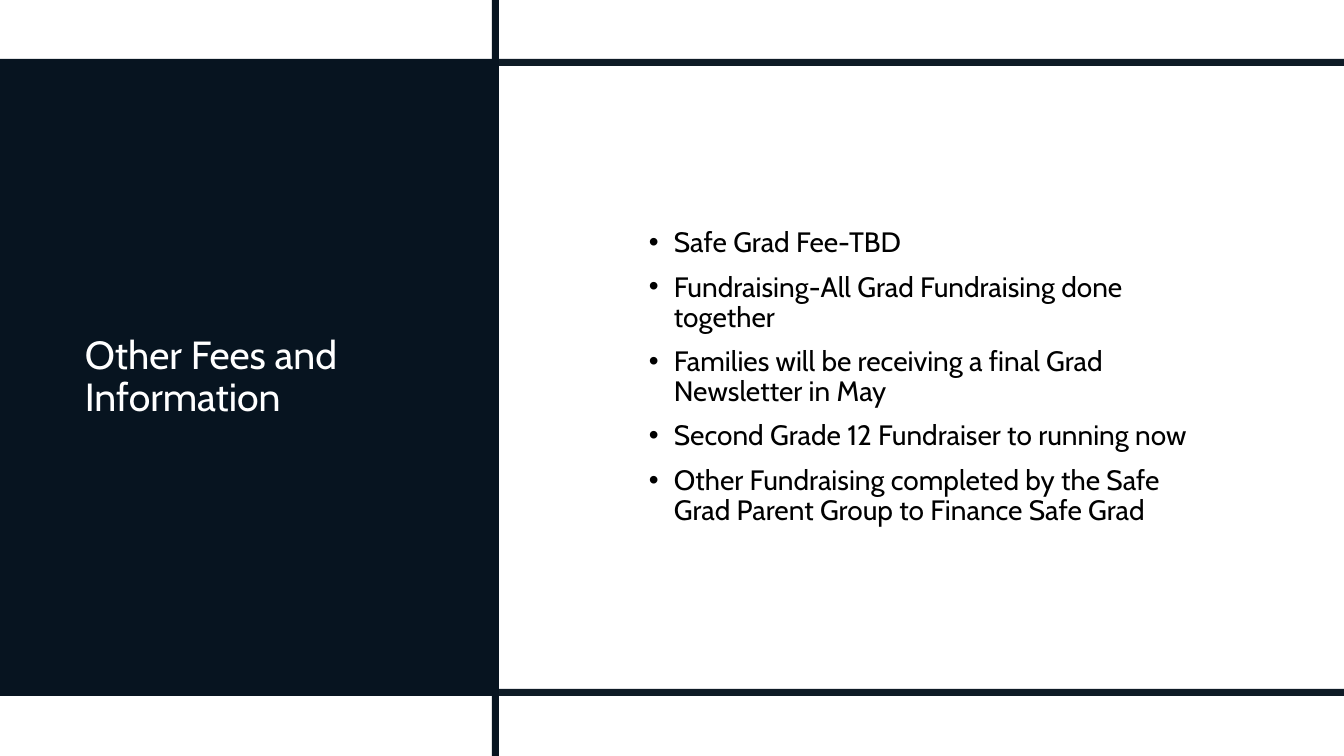
from lxml import etree
from pptx import Presentation
from pptx.dml.color import RGBColor
from pptx.enum.shapes import MSO_SHAPE
from pptx.enum.text import MSO_ANCHOR
from pptx.oxml.ns import qn
from pptx.util import Emu, Pt

RECT = MSO_SHAPE.RECTANGLE
MIDDLE = MSO_ANCHOR.MIDDLE

# Content
TITLE = ["Other Fees and Information"]
FEES = [
    "Safe Grad Fee-TBD",
    "Fundraising-All Grad Fundraising done together",
    "Families will be receiving a final Grad Newsletter in May",
    "Second Grade 12 Fundraiser to running now",
    "Other Fundraising completed by the Safe Grad Parent Group to Finance Safe Grad",
]
NAVY, WHITE, BLACK = "071420", "FFFFFF", "000000"

# Layout in px
WIDTH, HEIGHT = 1344, 756
PANEL_TOP, PANEL_BOTTOM, PANEL_RIGHT = 59, 696, 499
BAR = 7
TEXT_TOP, TEXT_HEIGHT = 160, 435
INDENT = 25
TITLE_BOX = (75, TEXT_TOP, 342, TEXT_HEIGHT)
FEES_BOX = (639, TEXT_TOP, 589, TEXT_HEIGHT)
TITLE_FORMAT = {"name": "Cabin", "size": Pt(28)}
FEES_FORMAT = {"name": "Cabin", "size": Pt(20)}


def px(length):
    return Emu(round(length * 12192000 / WIDTH))


def rgb(color):
    return RGBColor.from_string(color)


prs = Presentation()
prs.slide_width, prs.slide_height = px(WIDTH), px(HEIGHT)
slide = prs.slides.add_slide(prs.slide_layouts[6])


def add_band(left, top, width, height, opacity=100):
    band = slide.shapes.add_shape(RECT, *map(px, (left, top, width, height)))
    band.shadow.inherit = False
    band.fill.solid()
    band.fill.fore_color.rgb = rgb(NAVY)
    band.line.fill.background()
    if opacity < 100:
        color = band.fill._xPr.find(qn("a:solidFill"))[0]
        etree.SubElement(color, qn("a:alpha"), val=str(opacity * 1000))


def add_text(box, lines, font_format, color, bulleted=False):
    frame = slide.shapes.add_textbox(*map(px, box)).text_frame
    frame.word_wrap = True
    frame.vertical_anchor = MIDDLE
    for index, line in enumerate(lines):
        paragraph = frame.paragraphs[0] if index == 0 else frame.add_paragraph()
        paragraph.text = line
        paragraph.line_spacing = 0.9
        paragraph.space_before = Pt(10 if index else 0)
        if bulleted:
            properties = paragraph._p.get_or_add_pPr()
            properties.set("marL", str(px(INDENT)))
            properties.set("indent", str(-px(INDENT)))
            etree.SubElement(properties, qn("a:buFont"), typeface="Arial")
            etree.SubElement(properties, qn("a:buChar"), char="•")
        for key, value in font_format.items():
            setattr(paragraph.font, key, value)
        paragraph.font.color.rgb = rgb(color)


# Title panel
add_band(0, PANEL_TOP, PANEL_RIGHT, PANEL_BOTTOM - PANEL_TOP)
add_text(TITLE_BOX, TITLE, TITLE_FORMAT, WHITE)

# Fee list
add_text(FEES_BOX, FEES, FEES_FORMAT, BLACK, bulleted=True)

# Crossing bars
for bar_top in (PANEL_TOP, PANEL_BOTTOM - BAR):
    add_band(0, bar_top, WIDTH, BAR, opacity=97)
add_band(PANEL_RIGHT - BAR, 0, BAR, HEIGHT)

prs.save("out.pptx")
